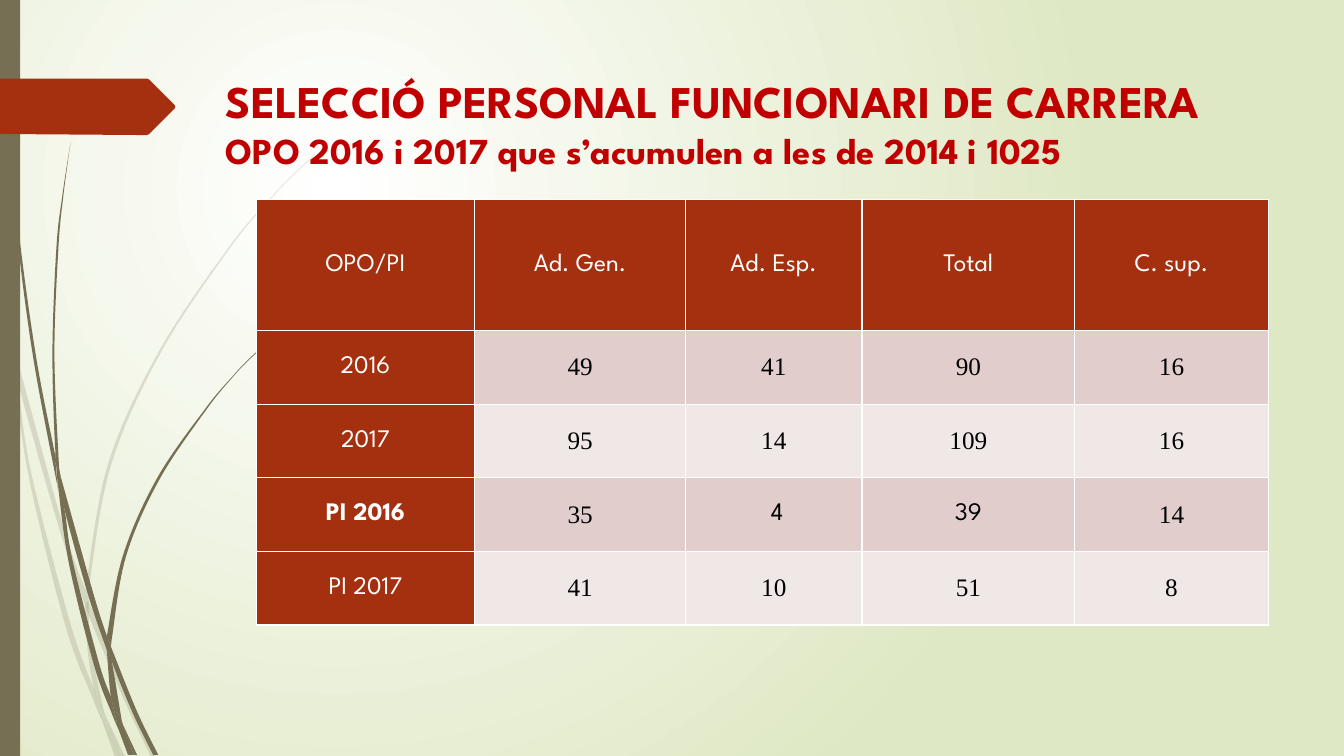
import pptx
import pptx.dml.color
import pptx.enum.shapes
import pptx.enum.text
import pptx.oxml
import pptx.oxml.ns
import pptx.util
from lxml import etree

RGBColor = pptx.dml.color.RGBColor
WHITE = RGBColor(0xFF, 0xFF, 0xFF)
BLACK = RGBColor(0, 0, 0)
PALE_GREEN = RGBColor(0xDF, 0xE8, 0xC4)
OLIVE = RGBColor(0x76, 0x6F, 0x54)
RUST = RGBColor(0xA5, 0x30, 0x10)
RED = RGBColor(0xC0, 0, 0)
BANDS = (RGBColor(0xE1, 0xCD, 0xCC), RGBColor(0xF0, 0xE8, 0xE7))

SANS = "League Spartan"
SERIF = "Times New Roman"

COLUMNS = (2.17, 2.09, 1.75, 2.11, 1.92)
HEADER_HEIGHT, ROW_HEIGHT = 1.3, 0.73
ROWS = (
    ("OPO/PI", "Ad. Gen.", "Ad. Esp.", "Total", "C. sup."),
    ("2016", "49", "41", "90", "16"),
    ("2017", "95", "14", "109", "16"),
    ("PI 2016", "35", " 4", "39", "14"),
    ("PI 2017", "41", "10", "51", "8"),
)
SANS_VALUES = {(3, 2), (3, 3)}
BOLD_CELLS = {(3, 0)}

# Grass blades: each is a list of smooth edges that meet at sharp corners (inches)
FAINT_BLADES = (
    (((0.11, 3.5), (0.09, 3.22), (0, 2.82)), ((0, 2.99), (0.1, 3.44), (0.11, 3.5))),
    (((0.14, 3.45), (0.17, 3.76), (0.58, 5.22), (0.84, 5.99)),
     ((0.85, 5.86), (0.62, 5.2), (0.14, 3.45))),
    (((0.88, 5.96), (0.88, 6.1), (1.23, 6.94), (1.5, 7.51)),
     ((1.55, 7.51), (1.27, 6.92), (0.92, 6.07), (0.88, 5.96))),
    (((1.19, 7.51), (1.24, 7.51)), ((1.05, 7.11), (1.19, 7.51))),
    (((0.93, 6.83), (0.7, 6.19), (0.31, 4.69), (0.17, 3.76), (0.11, 3.5)),
     ((0.11, 3.5), (0.28, 4.7), (0.65, 6.21), (0.92, 6.93), (1.01, 7.14)),
     ((0.99, 7.07), (0.93, 6.83))),
    (((0.84, 5.99), (0.87, 6.46), (0.93, 6.83), (0.96, 6.92), (1.05, 7.11)),
     ((1.03, 7.06), (0.91, 6.46), (0.88, 6.1), (0.88, 6.08), (0.84, 5.99))),
    (((0.88, 5.84), (1.1, 4.62), (1.6, 3.49), (2.29, 2.45), (2.68, 1.98),
      (2.9, 1.75), (3.12, 1.54)),
     ((3.12, 1.53), (2.89, 1.75), (2.68, 1.97), (2.28, 2.44), (1.58, 3.48),
      (1.07, 4.61), (0.85, 5.84)),
     ((0.85, 5.86), (0.88, 5.96))),
    (((1.01, 7.14), (1.14, 7.51)), ((1.19, 7.51), (1.01, 7.14))),
    (((0.88, 6.08), (0.88, 6.1), (0.88, 5.96)), ((0.85, 5.86), (0.84, 5.99))),
    (((0.93, 6.83), (0.99, 7.07), (1.01, 7.14), (1.19, 7.51)),
     ((1.19, 7.51), (1.05, 7.11), (0.96, 6.92), (0.93, 6.83))),
)
SOLID_BLADES = (
    (((0.03, 0), (0.04, 0.48), (0.07, 1.1), (0.17, 2.33), (0.33, 3.55),
      (0.56, 4.77), (0.57, 4.81)),
     ((0.55, 4.57), (0.55, 4.53), (0.36, 3.55), (0.19, 2.32), (0.08, 1.09),
      (0.05, 0.48), (0.04, 0))),
    (((0.6, 4.72), (0.64, 5.05), (0.88, 5.92), (1.06, 6.45)),
     ((1.06, 6.33), (1.06, 6.31), (0.93, 5.9), (0.6, 4.72))),
    (((1.1, 6.41), (1.11, 6.56), (1.32, 7.08), (1.52, 7.49)),
     ((1.57, 7.49), (1.36, 7.06), (1.13, 6.49), (1.1, 6.41))),
    (((1.1, 6.91), (0.98, 6.57), (0.72, 5.56), (0.64, 5.05), (0.57, 4.77)),
     ((0.57, 4.77), (0.68, 5.57), (0.93, 6.59), (1.11, 7.08), (1.17, 7.22)),
     ((1.16, 7.17), (1.1, 6.91))),
    (((0.6, 4.72), (0.58, 4.53), (0.54, 3.49), (0.58, 2.45), (0.63, 1.93), (0.7, 1.41)),
     ((0.7, 1.41), (0.62, 1.93), (0.56, 2.45), (0.52, 3.49), (0.55, 4.49), (0.6, 4.72))),
    (((1.33, 7.49), (1.36, 7.49)), ((1.22, 7.19), (1.33, 7.49))),
    (((0.57, 4.77), (0.64, 5.05)), ((0.6, 4.72), (0.55, 4.49)), ((0.55, 4.53), (0.57, 4.77))),
    (((1.11, 6.33), (1.25, 5.52), (1.58, 4.76), (2.05, 4.06), (2.31, 3.74),
      (2.45, 3.59), (2.61, 3.44)),
     ((2.6, 3.44), (2.45, 3.58), (2.31, 3.73), (2.04, 4.05), (1.56, 4.74),
      (1.22, 5.51), (1.06, 6.31)),
     ((1.1, 6.41), (1.11, 6.33))),
    (((1.17, 7.22), (1.27, 7.49)), ((1.31, 7.49), (1.17, 7.22))),
    (((1.06, 6.45), (1.1, 6.91), (1.16, 7.06), (1.22, 7.19)),
     ((1.21, 7.16), (1.11, 6.56), (1.09, 6.51), (1.06, 6.45))),
    (((1.06, 6.45), (1.09, 6.51), (1.11, 6.56)), ((1.1, 6.41), (1.06, 6.31))),
    (((1.1, 6.91), (1.16, 7.17), (1.17, 7.22), (1.3, 7.49)),
     ((1.33, 7.49), (1.22, 7.19), (1.16, 7.06), (1.1, 6.91))),
)
ARROW = (((0, 0.78), (1.46, 0.78)), ((1.48, 0.79), (1.73, 1.04)),
         ((1.74, 1.06), (1.73, 1.08)), ((1.48, 1.33), (1.46, 1.34)),
         ((1.36, 1.34), (0, 1.33)))


def inches(*lengths):
    return [pptx.util.Inches(length) for length in lengths]


def add_xml(parent, markup):
    namespace = pptx.oxml.ns.nsdecls("a")
    parent.append(pptx.oxml.parse_xml(markup.replace(" ", f" {namespace} ", 1)))


def trace(edges):
    """Return the corner points, and the two curve handles that lead to each."""
    points, handles = [], []
    for edge in edges:
        knots = [inches(*knot) for knot in edge]
        if not points or points[-1] != knots[0]:
            points.append(knots[0])
            handles.append(None)
        padded = [knots[0], *knots, knots[-1]]
        for before, start, end, after in zip(padded, padded[1:], padded[2:], padded[3:]):
            points.append(end)
            handles.append(None if len(knots) == 2 else (
                [s + (e - b) / 6 for b, s, e in zip(before, start, end)],
                [e - (a - s) / 6 for s, e, a in zip(start, end, after)]))
    return points, handles


def bend(shape, handles):
    """Turn the straight steps that have handles into curves."""
    steps = shape.element.findall(".//" + pptx.oxml.ns.qn("a:lnTo"))
    for step, pair in zip(steps, handles):
        if pair:
            step.tag = pptx.oxml.ns.qn("a:cubicBezTo")
            for index, (x, y) in enumerate(pair):
                point = etree.Element(pptx.oxml.ns.qn("a:pt"))
                point.set("x", str(round(x - shape.left)))
                point.set("y", str(round(y - shape.top)))
                step.insert(index, point)


def paint(shape, color, opacity=100):
    shape.shadow.inherit = False
    shape.fill.solid()
    shape.fill.fore_color.rgb = color
    shape.line.fill.background()
    if opacity < 100:
        tint = shape.element.spPr.find(".//" + pptx.oxml.ns.qn("a:srgbClr"))
        add_xml(tint, f'<a:alpha val="{opacity * 1000}"/>')


def add_outline(page, edges, color, opacity=100):
    points, handles = trace(edges)
    builder = page.shapes.build_freeform(*points[0])
    builder.add_line_segments(points[1:], close=True)
    shape = builder.convert_to_shape()
    bend(shape, handles[1:])
    paint(shape, color, opacity)


def add_span(para, text, font, size, color, bold):
    span = para.add_run()
    span.text = text
    span.font.name = font
    span.font.size = pptx.util.Pt(size)
    span.font.color.rgb = color
    span.font.bold = bold


def set_background(page):
    fill = page.background.fill
    fill.gradient()
    for stop, color, position in zip(fill.gradient_stops, (WHITE, PALE_GREEN), (0, 1)):
        stop.color.rgb = color
        stop.position = position
    gradient = page.element.find(".//" + pptx.oxml.ns.qn("a:gradFill"))
    gradient.remove(gradient.find(pptx.oxml.ns.qn("a:lin")))
    add_xml(gradient, '<a:path path="circle"><a:fillToRect l="50000" t="50000" '
                      'r="100000" b="100000"/></a:path>')


def fill_title(page):
    box = page.shapes.title
    box.left, box.top, box.width, box.height = inches(2.14, 0.68, 10.44, 1.13)
    frame = box.text_frame
    frame.word_wrap = True
    frame.auto_size = pptx.enum.text.MSO_AUTO_SIZE.NONE
    frame.vertical_anchor = pptx.enum.text.MSO_ANCHOR.TOP
    para = frame.paragraphs[0]
    para.alignment = pptx.enum.text.PP_ALIGN.LEFT
    add_span(para, "SELECCIÓ PERSONAL FUNCIONARI DE CARRERA ", SANS, 32.4, RED, True)
    add_span(para, "OPO 2016 i 2017 que s’acumulen a les de 2014 i 1025", SANS, 26.1, RED, True)


def fill_cell(cell, row, column, text):
    is_heading = row == 0 or column == 0
    cell.margin_left = cell.margin_right = pptx.util.Inches(0.07)
    cell.margin_top = cell.margin_bottom = 0
    cell.vertical_anchor = pptx.enum.text.MSO_ANCHOR.MIDDLE
    para = cell.text_frame.paragraphs[0]
    para.alignment = pptx.enum.text.PP_ALIGN.CENTER
    font = SANS if is_heading or (row, column) in SANS_VALUES else SERIF
    add_span(para, text, font, 18, WHITE if is_heading else BLACK, (row, column) in BOLD_CELLS)
    for side in "LRTB":
        add_xml(cell._tc.get_or_add_tcPr(),
                f'<a:ln{side} w="12700"><a:solidFill><a:srgbClr val="{WHITE}"/>'
                f'</a:solidFill></a:ln{side}>')
    cell.fill.solid()
    cell.fill.fore_color.rgb = RUST if is_heading else BANDS[(row - 1) % 2]


def add_results_table(page):
    heights = [HEADER_HEIGHT] + [ROW_HEIGHT] * (len(ROWS) - 1)
    place = inches(2.54, 1.98, sum(COLUMNS), sum(heights))
    table = page.shapes.add_table(len(ROWS), len(COLUMNS), *place).table
    table.first_row = table.horz_banding = False
    for column, width in zip(table.columns, COLUMNS):
        column.width = pptx.util.Inches(width)
    for row, (height, texts) in enumerate(zip(heights, ROWS)):
        table.rows[row].height = pptx.util.Inches(height)
        for column, text in enumerate(texts):
            fill_cell(table.cell(row, column), row, column, text)


def main():
    deck = pptx.Presentation()
    deck.slide_width, deck.slide_height = inches(13.33, 7.5)
    page = deck.slides.add_slide(deck.slide_layouts[5])
    set_background(page)
    # Grass, side bar and arrow
    for blades, opacity in ((FAINT_BLADES, 20), (SOLID_BLADES, 100)):
        for blade in blades:
            add_outline(page, blade, OLIVE, opacity)
    bar = page.shapes.add_shape(pptx.enum.shapes.MSO_SHAPE.RECTANGLE, *inches(0, 0, 0.2, 7.5))
    paint(bar, OLIVE)
    add_outline(page, ARROW, RUST)
    # Content
    fill_title(page)
    add_results_table(page)
    deck.save("out.pptx")


if __name__ == "__main__":
    main()
